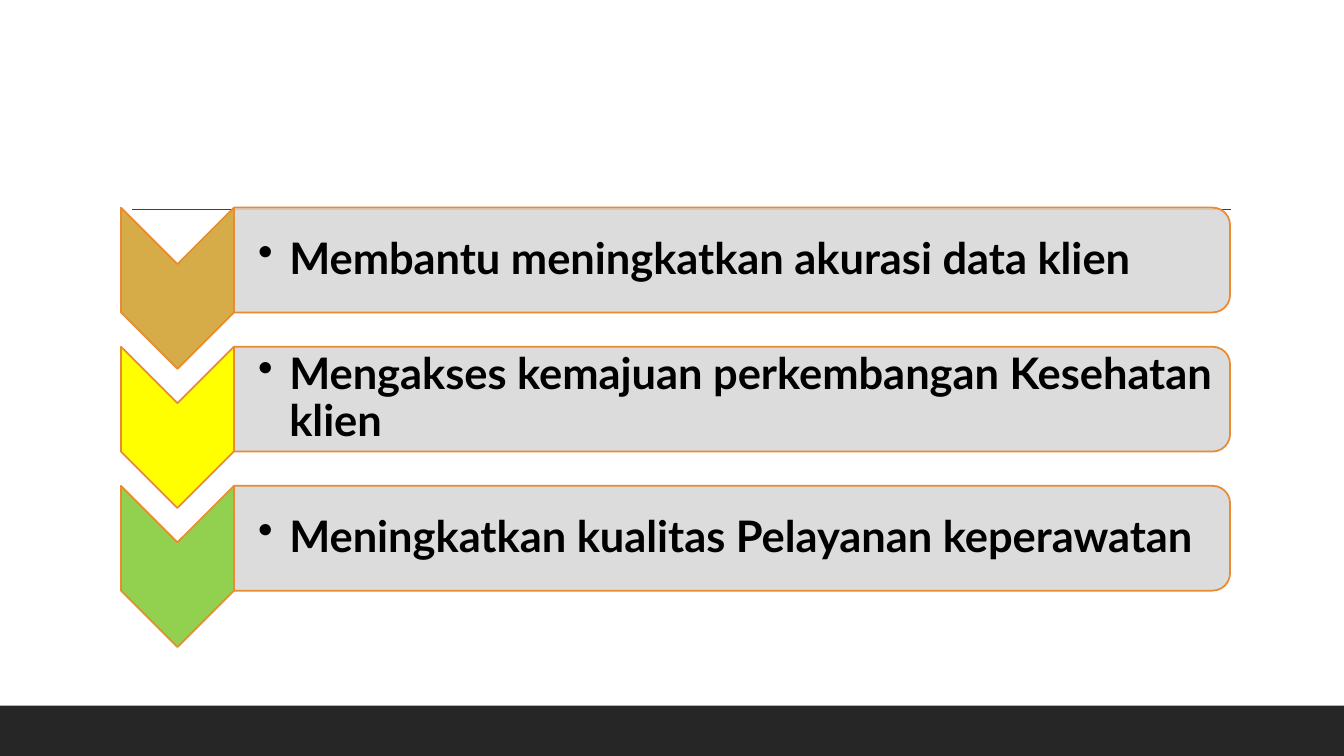
from lxml import etree
from pptx import Presentation
from pptx.dml.color import RGBColor
from pptx.enum.shapes import MSO_CONNECTOR, MSO_SHAPE
from pptx.enum.text import MSO_ANCHOR
from pptx.oxml.ns import qn
from pptx.util import Inches, Pt

COLORS = {
    "footer": "262626",
    "rule": "404040",
    "outline": "E88B33",
    "bar": "D9D9D9",
    "text": "000000",
    "gold": "D5AC47",
    "yellow": "FFFF00",
    "green": "92D050",
}
BENEFITS = [
    ("Membantu meningkatkan akurasi data klien", "gold"),
    ("Mengakses kemajuan perkembangan Kesehatan klien", "yellow"),
    ("Meningkatkan kualitas Pelayanan keperawatan", "green"),
]
FONT = "Lato"
CHEVRON = MSO_SHAPE.CHEVRON
BAR = MSO_SHAPE.ROUND_2_SAME_RECTANGLE
RECTANGLE = MSO_SHAPE.RECTANGLE
STRAIGHT = MSO_CONNECTOR.STRAIGHT
MIDDLE = MSO_ANCHOR.MIDDLE

SLIDE_W, SLIDE_H = 13.33, 7.5
FOOTER_H = 0.5
ROW_TOP, ROW_PITCH = 2.06, 1.38
CHEVRON_LEFT, CHEVRON_W, CHEVRON_H = 1.2, 1.12, 1.6
BAR_LEFT, BAR_W, BAR_H = CHEVRON_LEFT + CHEVRON_W, 9.88, 1.04
LABEL_W, LABEL_H = 9.83, 0.94


def color(name):
    return RGBColor.from_string(COLORS[name])


def add_filled(slide, preset, left, top, width, height, fill):
    shape = slide.shapes.add_shape(
        preset, Inches(left), Inches(top), Inches(width), Inches(height))
    shape.shadow.inherit = False
    shape.fill.solid()
    shape.fill.fore_color.rgb = color(fill)
    shape.line.fill.background()
    return shape


def add_turned(slide, preset, left, top, width, height, fill):
    shift = (width - height) / 2
    shape = add_filled(slide, preset, left + shift, top - shift, height, width, fill)
    shape.rotation = 90
    shape.line.color.rgb = color("outline")
    shape.line.width = Pt(1.25)
    return shape


def add_label(slide, text, top):
    label = slide.shapes.add_textbox(
        Inches(BAR_LEFT), Inches(top), Inches(LABEL_W), Inches(LABEL_H))
    frame = label.text_frame
    frame.word_wrap = True
    frame.vertical_anchor = MIDDLE
    frame.margin_left = Inches(0.24)
    frame.margin_top = frame.margin_right = frame.margin_bottom = Inches(0.02)
    paragraph = frame.paragraphs[0]
    paragraph.text = text
    paragraph.level = 1
    paragraph.line_spacing = 0.9
    paragraph.space_after = Pt(5)
    paragraph.font.name = FONT
    paragraph.font.size = Pt(31)
    paragraph.font.bold = True
    paragraph.font.color.rgb = color("text")
    properties = paragraph._p.get_or_add_pPr()
    properties.set("marL", str(Inches(0.31)))
    properties.set("indent", str(Inches(-0.31)))
    bullet = etree.Element(qn("a:buChar"), char="•")
    properties.find(qn("a:defRPr")).addprevious(bullet)


def add_benefit(slide, text, fill, top):
    add_turned(slide, CHEVRON, CHEVRON_LEFT, top, CHEVRON_W, CHEVRON_H, fill)
    bar = add_turned(slide, BAR, BAR_LEFT, top, BAR_W, BAR_H, "bar")
    bar_color = bar.fill._xPr.find(qn("a:solidFill"))[0]
    etree.SubElement(bar_color, qn("a:alpha"), val="90000")
    add_label(slide, text, top + (BAR_H - LABEL_H) / 2)


def main():
    deck = Presentation()
    deck.slide_width, deck.slide_height = Inches(SLIDE_W), Inches(SLIDE_H)
    slide = deck.slides.add_slide(deck.slide_layouts[6])

    add_filled(slide, RECTANGLE, 0, SLIDE_H - FOOTER_H, SLIDE_W, FOOTER_H, "footer")
    rule = slide.shapes.add_connector(
        STRAIGHT, Inches(1.31), Inches(2.08), Inches(12.21), Inches(2.08))
    rule.line.color.rgb = color("rule")
    rule.line.width = Pt(1)
    etree.SubElement(rule._element.spPr, qn("a:effectLst"))

    for row, (text, fill) in enumerate(BENEFITS):
        add_benefit(slide, text, fill, ROW_TOP + row * ROW_PITCH)

    deck.save("out.pptx")


if __name__ == "__main__":
    main()
